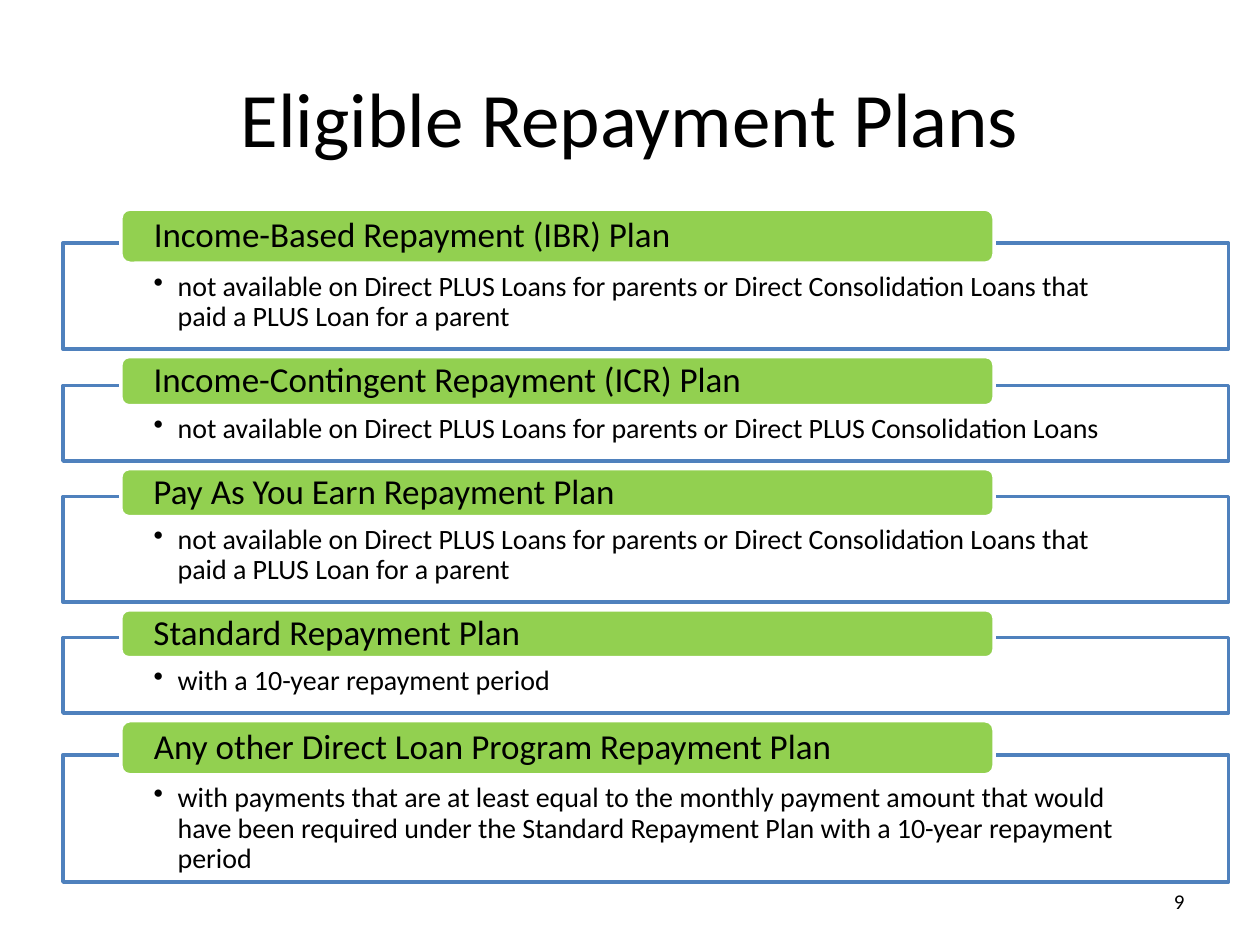
from lxml import etree
from pptx import Presentation
from pptx.dml.color import RGBColor
from pptx.enum import shapes, text
from pptx.oxml import ns
from pptx.util import Inches, Pt

TITLE = "Eligible Repayment Plans"
PAGE_NUMBER = "9"
PARENT_LIMIT = ("not available on Direct PLUS Loans for parents or Direct "
                "Consolidation Loans that paid a PLUS Loan for a parent")
# name, condition, header height, panel height (inches)
PLANS = [
    ("Income-Based Repayment (IBR) Plan", PARENT_LIMIT, 0.43, 0.84),
    ("Income-Contingent Repayment (ICR) Plan",
     "not available on Direct PLUS Loans for parents or Direct PLUS Consolidation Loans",
     0.39, 0.6),
    ("Pay As You Earn Repayment Plan", PARENT_LIMIT, 0.38, 0.84),
    ("Standard Repayment Plan", "with a 10-year repayment period", 0.38, 0.6),
    ("Any other Direct Loan Program Repayment Plan",
     "with payments that are at least equal to the monthly payment amount that would "
     "have been required under the Standard Repayment Plan with a 10-year repayment period",
     0.43, 1.01),
]
THEME = {
    "font": "Calibri",
    "ink": RGBColor(0, 0, 0),
    "white": RGBColor(255, 255, 255),
    "green": RGBColor(0x92, 0xD0, 0x50),
    "blue": RGBColor(0x4F, 0x81, 0xBD),
    "title": 44, "header": 20, "body": 16, "number": 12,
}
FIRST_TOP, OVERLAP, GAP = 1.66, 0.16, 0.06
PANEL_LEFT, PANEL_WIDTH = 0.5, 9.25
HEADER_LEFT, HEADER_WIDTH = 0.96, 6.93


def write(box, words, size, align, anchor, insets=(0.1, 0.05, 0.1, 0.05)):
    frame = box.text_frame
    frame.word_wrap = True
    frame.auto_size = text.MSO_AUTO_SIZE.NONE
    frame.vertical_anchor = anchor
    (frame.margin_left, frame.margin_top,
     frame.margin_right, frame.margin_bottom) = map(Inches, insets)
    para = frame.paragraphs[0]
    para.alignment = align
    span = para.add_run()
    span.text = words
    span.font.size = Pt(THEME[size])
    span.font.name = THEME["font"]
    span.font.color.rgb = THEME["ink"]
    return para


def add_block(page, kind, place, fill, line):
    block = page.shapes.add_shape(kind, *map(Inches, place))
    block.shadow.inherit = False
    block.fill.solid()
    block.fill.fore_color.rgb = THEME[fill]
    block.line.color.rgb = THEME[line]
    block.line.width = Pt(2)
    return block


def add_bullet(para):
    props = para._p.get_or_add_pPr()
    props.set("marL", str(Inches(0.19)))
    props.set("indent", str(-Inches(0.19)))
    etree.SubElement(props, ns.qn("a:buChar")).set("char", "•")


def set_opacity(shape, percent):
    color = shape.fill._xPr.find(ns.qn("a:solidFill"))[0]
    etree.SubElement(color, ns.qn("a:alpha")).set("val", str(percent * 1000))


def add_plan(page, top, name, condition, header_height, panel_height):
    """Draw one plan and return the bottom of its panel."""
    panel_top = top + header_height - OVERLAP
    panel = add_block(page, shapes.MSO_SHAPE.RECTANGLE,
                      (PANEL_LEFT, panel_top, PANEL_WIDTH, panel_height), "white", "blue")
    set_opacity(panel, 90)
    para = write(panel, condition, "body", text.PP_ALIGN.LEFT, text.MSO_ANCHOR.TOP,
                 (0.72, 0.23, 0.72, 0.12))
    add_bullet(para)
    para.level = 1
    para.line_spacing = 0.9

    header = add_block(page, shapes.MSO_SHAPE.ROUNDED_RECTANGLE,
                       (HEADER_LEFT, top, HEADER_WIDTH, header_height), "green", "white")
    para = write(header, name, "header", text.PP_ALIGN.LEFT, text.MSO_ANCHOR.MIDDLE,
                 (0.24, 0, 0.24, 0))
    para.line_spacing = 0.9
    return panel_top + panel_height


def main():
    deck = Presentation()
    deck.slide_width, deck.slide_height = Inches(10), Inches(7.5)
    page = deck.slides.add_slide(deck.slide_layouts[5])

    title = page.shapes.title
    title.left, title.top, title.width, title.height = map(Inches, (0.5, 0.3, 9, 1.25))
    write(title, TITLE, "title", text.PP_ALIGN.CENTER, text.MSO_ANCHOR.MIDDLE)

    number = page.shapes.add_textbox(*map(Inches, (7.17, 6.95, 2.33, 0.4)))
    write(number, PAGE_NUMBER, "number", text.PP_ALIGN.RIGHT, text.MSO_ANCHOR.MIDDLE)

    top = FIRST_TOP
    for plan in PLANS:
        top = add_plan(page, top, *plan) + GAP

    deck.save("out.pptx")


if __name__ == "__main__":
    main()
